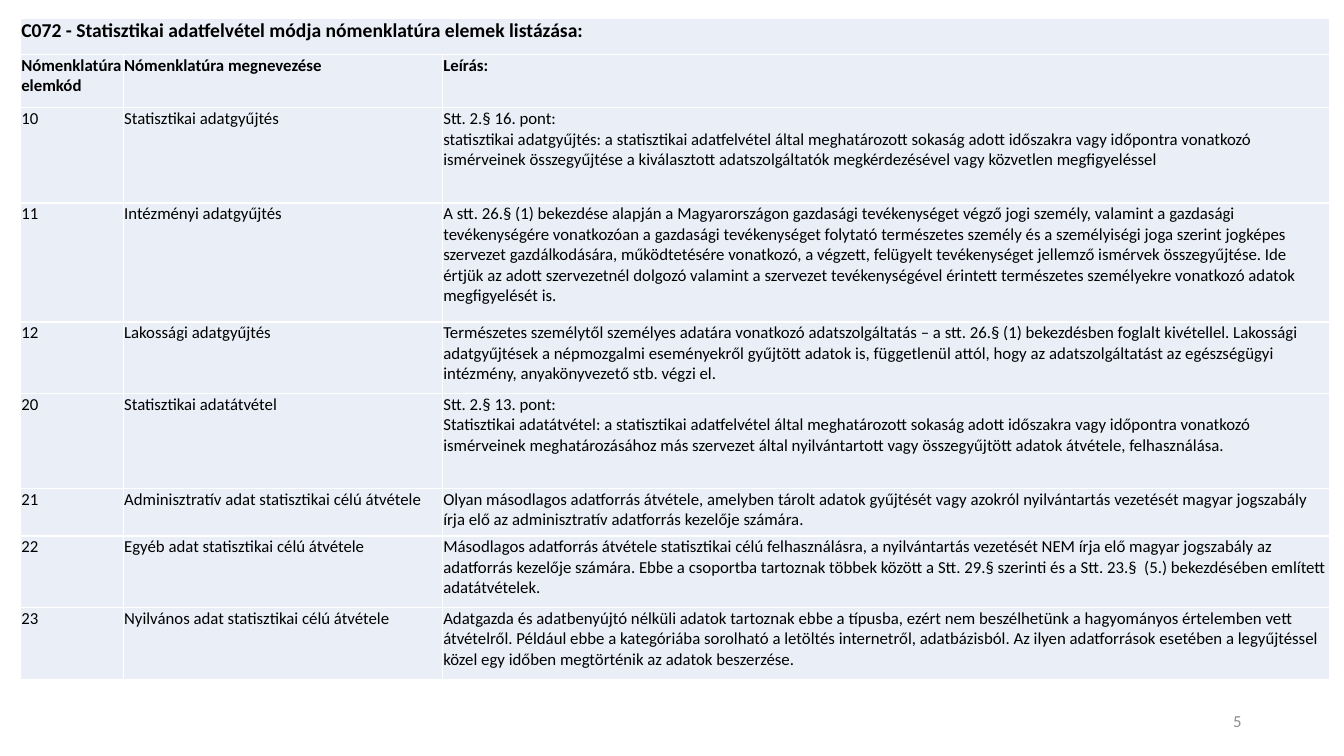
from pptx import Presentation
from pptx.dml.color import RGBColor
from pptx.enum import text
from pptx.util import Pt

BLACK = RGBColor(0x00, 0x00, 0x00)
GREY = RGBColor(0x8C, 0x8C, 0x8C)
PALE_BLUE = RGBColor(0xEA, 0xEF, 0xF7)
FONT = "Calibri"

TITLE = "C072 - Statisztikai adatfelvétel módja nómenklatúra elemek listázása:"
HEADINGS = ("Nómenklatúra elemkód", "Nómenklatúra megnevezése", "Leírás:")
ELEMENTS = [
    ("10", "Statisztikai adatgyűjtés",
     "Stt. 2.§ 16. pont:\v"
     "statisztikai adatgyűjtés: a statisztikai adatfelvétel által meghatározott sokaság "
     "adott időszakra vagy időpontra vonatkozó ismérveinek összegyűjtése a kiválasztott "
     "adatszolgáltatók megkérdezésével vagy közvetlen megfigyeléssel"),
    ("11", "Intézményi adatgyűjtés",
     "A stt. 26.§ (1) bekezdése alapján a Magyarországon gazdasági tevékenységet végző "
     "jogi személy, valamint a gazdasági tevékenységére vonatkozóan a gazdasági "
     "tevékenységet folytató természetes személy és a személyiségi joga szerint jogképes "
     "szervezet gazdálkodására, működtetésére vonatkozó, a végzett, felügyelt "
     "tevékenységet jellemző ismérvek összegyűjtése. Ide értjük az adott szervezetnél "
     "dolgozó valamint a szervezet tevékenységével érintett természetes személyekre "
     "vonatkozó adatok megfigyelését is."),
    ("12", "Lakossági adatgyűjtés",
     "Természetes személytől személyes adatára vonatkozó adatszolgáltatás – a stt. 26.§ "
     "(1) bekezdésben foglalt kivétellel. Lakossági adatgyűjtések a népmozgalmi "
     "eseményekről gyűjtött adatok is, függetlenül attól, hogy az adatszolgáltatást az "
     "egészségügyi intézmény, anyakönyvezető stb. végzi el."),
    ("20", "Statisztikai adatátvétel",
     "Stt. 2.§ 13. pont:\v"
     "Statisztikai adatátvétel: a statisztikai adatfelvétel által meghatározott sokaság "
     "adott időszakra vagy időpontra vonatkozó ismérveinek meghatározásához más szervezet "
     "által nyilvántartott vagy összegyűjtött adatok átvétele, felhasználása."),
    ("21", "Adminisztratív adat statisztikai célú átvétele",
     "Olyan másodlagos adatforrás átvétele, amelyben tárolt adatok gyűjtését vagy azokról "
     "nyilvántartás vezetését magyar jogszabály írja elő az adminisztratív adatforrás "
     "kezelője számára."),
    ("22", "Egyéb adat statisztikai célú átvétele",
     "Másodlagos adatforrás átvétele statisztikai célú felhasználásra, a nyilvántartás "
     "vezetését NEM írja elő magyar jogszabály az adatforrás kezelője számára. Ebbe a "
     "csoportba tartoznak többek között a Stt. 29.§ szerinti és a Stt. 23.§  (5.) "
     "bekezdésében említett adatátvételek."),
    ("23", "Nyilvános adat statisztikai célú átvétele",
     "Adatgazda és adatbenyújtó nélküli adatok tartoznak ebbe a típusba, ezért nem "
     "beszélhetünk a hagyományos értelemben vett átvételről. Például ebbe a kategóriába "
     "sorolható a letöltés internetről, adatbázisból. Az ilyen adatforrások esetében a "
     "legyűjtéssel közel egy időben megtörténik az adatok beszerzése."),
]
COLUMN_WIDTHS = (73.5, 228, 633.5)
ROW_HEIGHTS = (26, 38, 68, 85, 51, 68, 34, 51, 51.5)


def write(frame, wording, size, color, bold=False):
    frame.text = wording
    paragraph = frame.paragraphs[0]
    font = paragraph.font
    font.name, font.size, font.bold = FONT, Pt(size), bold
    font.color.rgb = color
    return paragraph


def fill_cell(cell, wording, size=12, bold=False):
    cell.fill.solid()
    cell.fill.fore_color.rgb = PALE_BLUE
    cell.margin_left = cell.margin_right = cell.margin_top = Pt(0.7)
    cell.margin_bottom = Pt(0)
    write(cell.text_frame, wording, size, BLACK, bold)


def add_nomenclature(slide):
    rows = [HEADINGS] + ELEMENTS
    nomenclature = slide.shapes.add_table(
        len(ROW_HEIGHTS), len(COLUMN_WIDTHS), Pt(14.5), Pt(13),
        Pt(sum(COLUMN_WIDTHS)), Pt(sum(ROW_HEIGHTS))).table
    nomenclature.first_row = nomenclature.horz_banding = False
    for column, width in zip(nomenclature.columns, COLUMN_WIDTHS):
        column.width = Pt(width)
    for row, height in zip(nomenclature.rows, ROW_HEIGHTS):
        row.height = Pt(height)

    title = nomenclature.cell(0, 0)
    title.merge(nomenclature.cell(0, len(COLUMN_WIDTHS) - 1))
    fill_cell(title, TITLE, size=14, bold=True)
    for r, row in enumerate(rows, start=1):
        for c, wording in enumerate(row):
            fill_cell(nomenclature.cell(r, c), wording, bold=row is HEADINGS)


def add_page_number(slide, number):
    frame = slide.shapes.add_textbox(Pt(678), Pt(500.5), Pt(216), Pt(29)).text_frame
    frame.word_wrap = True
    frame.vertical_anchor = text.MSO_ANCHOR.MIDDLE
    write(frame, number, 12, GREY).alignment = text.PP_ALIGN.RIGHT


def main():
    deck = Presentation()
    deck.slide_width, deck.slide_height = Pt(960), Pt(540)
    slide = deck.slides.add_slide(deck.slide_layouts[6])
    add_page_number(slide, "5")
    add_nomenclature(slide)
    deck.save("out.pptx")


if __name__ == "__main__":
    main()
